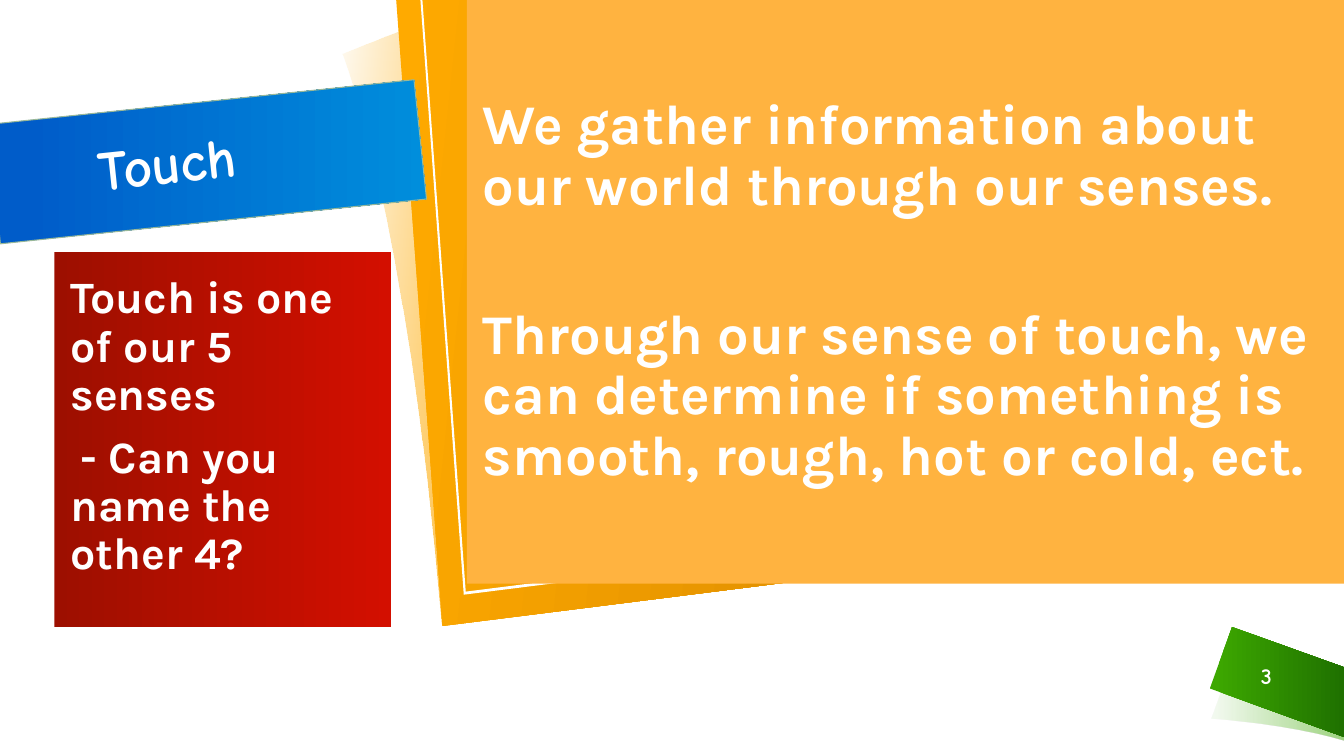
import pptx
import pptx.dml.color
import pptx.enum.shapes
import pptx.enum.text
import pptx.util
from lxml import etree

WIDTH, HEIGHT = 13.33, 7.5
COLORS = {
    "white": "FFFFFF", "sage": "99B898",
    "green": "3DA800", "dark green": "1F7100",
    "amber": "FFAA00", "bronze": "C07400", "apricot": "FFB340",
    "blue": "005CC9", "sky": "008EDC",
    "maroon": "9D0F00", "red": "D30F00",
}

# A fill is a colour name, or (clockwise angle, (position, colour, opacity), ...).
# An outline point is (x, y); a curve is three such points.
SCENERY = [
    ((0, (0.03, "green", 0.06), (1, "green", 0.5)),
     [(12.02, 7.13), ((12.02, 7.13), (12.78, 7.18), (WIDTH, 7.35)), (WIDTH, 6.68),
      ((12.72, 6.51), (12.24, 6.52), (12.24, 6.52))]),
    ((0, (0.03, "green", 1), (1, "dark green", 1)),
     [(WIDTH, 6.62), (12.22, 6.22), (12, 6.83), (WIDTH, 7.31)]),
    ((6, (0, "amber", 0.05), (1, "amber", 1)),
     [(4.79, 0), ((4.35, 0.15), (3.4, 0.54), (3.4, 0.54)),
      ((3.4, 0.54), (4.03, 2.07), (4.38, 6.19)),
      ((4.56, 6.12), (5.17, 5.99), (5.17, 5.99)),
      ((5.17, 5.99), (5.02, 0.61), (5.01, 0))]),
    ((6, (0, "amber", 1), (1, "bronze", 1)),
     [(WIDTH, 5.08), (WIDTH, 0), (3.93, 0), (4.39, 6.21)]),
    ("white",
     [(WIDTH, 4.77), (4.62, 5.87), (4.19, 0), (4.17, 0), (4.6, 5.9), (WIDTH, 4.8)]),
]
BANNER = [(-0.07, 1.01), (4.18, 1.01), (4.18, 2.2), (-0.07, 2.2)]
BANNER_FILL = (6, (0.09, "blue", 1), (1, "sky", 1))
QUESTION_BOX = (0.54, 2.5, 3.34, 3.72)
QUESTION_FILL = (0, (0, "maroon", 1), (1, "red", 1))
FACTS_BOX = (4.63, 0, 8.7, 5.79)
NUMBER_BOX = (12.21, 6.5, 0.7, 0.4)

# Each paragraph is (text, space before in points, first-line indent in inches).
TITLE = [("Touch", 0, 0)]
QUESTION = [
    ("Touch is one of our 5 senses", 0, 0),
    ("- Can you name the other 4?", 10, 0.1),
]
FACTS = [
    ("We gather information about our world through our senses.", 0, 0),
    ("Through our sense of touch, we can determine if something is "
     "smooth, rough, hot or cold, ect.", 63, 0),
]
NUMBER = [("3", 0, 0)]

CURVE_STEPS = 16
inches = pptx.util.Inches


def rgb(name):
    return pptx.dml.color.RGBColor.from_string(COLORS[name])


def paint(shape, fill):
    shape.shadow.inherit = False
    shape.line.fill.background()
    if isinstance(fill, str):
        shape.fill.solid()
        shape.fill.fore_color.rgb = rgb(fill)
        return
    angle, *stops = fill
    shape.fill.gradient()
    shape.fill.gradient_angle = (360 - angle) % 360
    for stop, (position, color, _) in zip(shape.fill.gradient_stops, stops):
        stop.position = position
        stop.color.rgb = rgb(color)
    color_tags = shape.element.spPr.iter(pptx.oxml.ns.qn("a:srgbClr"))
    for tag, (_, _, opacity) in zip(color_tags, stops):
        if opacity < 1:
            alpha = etree.SubElement(tag, pptx.oxml.ns.qn("a:alpha"))
            alpha.set("val", str(round(opacity * 100000)))


def flatten(outline):
    """Turn the curves of an outline into short straight steps."""
    points = []
    for part in outline:
        if not isinstance(part[0], tuple):
            points.append(part)
            continue
        controls = (points[-1], *part)
        for step in range(1, CURVE_STEPS + 1):
            t = step / CURVE_STEPS
            weights = ((1 - t) ** 3, 3 * t * (1 - t) ** 2, 3 * t * t * (1 - t), t ** 3)
            points.append(tuple(
                sum(weight * point[axis] for weight, point in zip(weights, controls))
                for axis in (0, 1)))
    return points


def add_outline(slide, outline, fill):
    points = [(inches(x), inches(y)) for x, y in flatten(outline)]
    builder = slide.shapes.build_freeform(*points[0], scale=1.0)
    builder.add_line_segments(points[1:], close=True)
    shape = builder.convert_to_shape()
    paint(shape, fill)
    return shape


def add_panel(slide, box, fill):
    shape = slide.shapes.add_shape(
        pptx.enum.shapes.MSO_SHAPE.RECTANGLE, *map(inches, box))
    paint(shape, fill)
    return shape


def write(shape, paragraphs, font, size, insets, align="LEFT", spacing=0.9):
    """Fill a shape with text; insets are left, top, right, bottom."""
    frame = shape.text_frame
    sides = ("margin_left", "margin_top", "margin_right", "margin_bottom")
    frame_format = dict(zip(sides, map(inches, insets)))
    frame_format["word_wrap"] = True
    frame_format["vertical_anchor"] = pptx.enum.text.MSO_ANCHOR.MIDDLE
    for key, value in frame_format.items():
        setattr(frame, key, value)
    for index, (text, before, indent) in enumerate(paragraphs):
        paragraph = frame.add_paragraph() if index else frame.paragraphs[0]
        paragraph_format = {
            "alignment": getattr(pptx.enum.text.PP_ALIGN, align),
            "line_spacing": spacing,
            "space_before": pptx.util.Pt(before),
        }
        for key, value in paragraph_format.items():
            setattr(paragraph, key, value)
        if indent:
            paragraph._p.get_or_add_pPr().set("indent", str(inches(indent)))
        run = paragraph.add_run()
        run.text = text
        font_format = {"name": font, "size": pptx.util.Pt(size), "bold": True}
        for key, value in font_format.items():
            setattr(run.font, key, value)
        run.font.color.rgb = rgb("white")


def main():
    presentation = pptx.Presentation()
    presentation.slide_width = inches(WIDTH)
    presentation.slide_height = inches(HEIGHT)
    slide = presentation.slides.add_slide(presentation.slide_layouts[6])

    for fill, outline in SCENERY:
        add_outline(slide, outline, fill)

    banner = add_outline(slide, BANNER, BANNER_FILL)
    banner.rotation = -6
    banner.line.color.rgb = rgb("sage")
    banner.line.width = pptx.util.Pt(0.75)
    write(banner, TITLE, "Comic Neue", 40, (1.04, 0.05, 0.1, 0.05))

    question = add_panel(slide, QUESTION_BOX, QUESTION_FILL)
    write(question, QUESTION, "Karla", 32, (0.16, 0.22, 0.12, 0.46))

    number = slide.shapes.add_textbox(*map(inches, NUMBER_BOX))
    write(number, NUMBER, "Comic Neue", 16, (0.1, 0.05, 0.1, 0.05), "CENTER", 1.0)

    facts = add_panel(slide, FACTS_BOX, "apricot")
    write(facts, FACTS, "Karla", 40, (0.16, 0.12, 0.12, 0.12))

    presentation.save("out.pptx")


if __name__ == "__main__":
    main()
